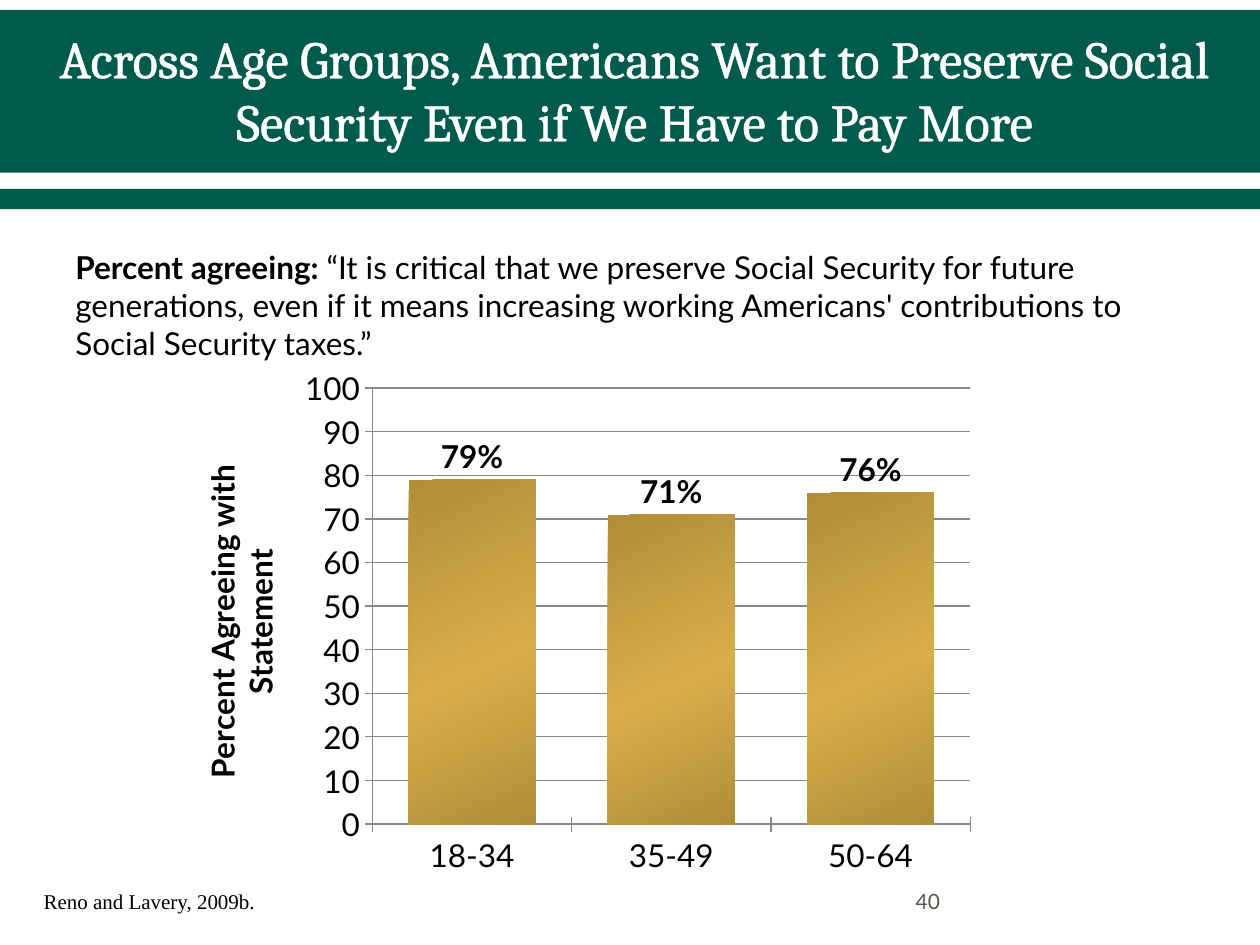
from copy import deepcopy

from lxml.etree import SubElement as Sub
from pptx import Presentation
from pptx.chart.data import CategoryChartData as Data
from pptx.dml.color import RGBColor as RGB
from pptx.enum.chart import XL_CHART_TYPE as Kind
from pptx.enum.chart import XL_LABEL_POSITION as Pos
from pptx.enum.chart import XL_TICK_MARK as Tick
from pptx.enum.shapes import MSO_SHAPE as Form
from pptx.enum.text import MSO_ANCHOR as Anchor
from pptx.enum.text import MSO_AUTO_SIZE as Auto
from pptx.enum.text import PP_ALIGN as Align
from pptx.oxml import parse_xml
from pptx.oxml.ns import nsdecls, qn
from pptx.util import Cm, Pt

GREEN = RGB(0x00, 0x5B, 0x4D)
WHITE = RGB(0xFF, 0xFF, 0xFF)
BLACK = RGB(0x00, 0x00, 0x00)
STONE = RGB(0x55, 0x55, 0x4A)
GRAY = RGB(0x88, 0x88, 0x88)
GOLD = RGB(0xD8, 0xAE, 0x4A)
DARK = RGB(0xB0, 0x8D, 0x38)


def style(font, name, size, color, bold=False):
    """Set the face, size, colour and weight of a font."""
    font.name, font.size, font.bold = name, Pt(size), bold
    font.color.rgb = color


def add_run(para, text, *look):
    """Append one styled run to a paragraph."""
    run = para.add_run()
    run.text = text
    style(run.font, *look)
    return run


def add_text(slide, box, runs, anchor=Anchor.TOP, auto=Auto.SHAPE_TO_FIT_TEXT):
    """Place a wrapping text box made of styled runs."""
    frame = slide.shapes.add_textbox(*map(Cm, box)).text_frame
    frame.word_wrap, frame.auto_size = True, auto
    frame.vertical_anchor = anchor
    for run in runs:
        add_run(frame.paragraphs[0], *run)


def add_head(slide, box, text):
    """Draw the green bands and set the title over them."""
    left, top, width, height = box
    for down, tall in ((0, 3.2), (3.61, 0.41), (0.08, 3.2)):
        band = slide.shapes.add_shape(
            Form.RECTANGLE, Cm(left), Cm(top + down), Cm(width), Cm(tall))
        band.shadow.inherit = False
        band.fill.solid()
        band.fill.fore_color.rgb = GREEN
        band.line.fill.background()
    title = slide.shapes.title
    slide.shapes._spTree.append(title._element)
    title.left, title.top = Cm(left + 0.63), Cm(top)
    title.width, title.height = Cm(width - 1.07), Cm(height)
    frame = title.text_frame
    frame.word_wrap, frame.auto_size = True, Auto.NONE
    frame.vertical_anchor = Anchor.MIDDLE
    para = frame.paragraphs[0]
    para.alignment = Align.CENTER
    run = add_run(para, text, "Cambria", 30, WHITE)
    run.font._element.insert(0, parse_xml(
        f'<a:ln {nsdecls("a")} w="{Pt(1.1)}"><a:solidFill>'
        f'<a:srgbClr val="{WHITE}"/></a:solidFill></a:ln>'))


def shade(fill):
    """Give a fill the slanted dark-gold-dark gradient."""
    fill.gradient()
    fill.gradient_angle = 295
    stops = fill._xPr.find(".//" + qn("a:gsLst"))
    stops.insert(1, deepcopy(stops[0]))
    for stop, color, at in zip(fill.gradient_stops, (DARK, GOLD, DARK), (0, 0.55, 1)):
        stop.color.rgb, stop.position = color, at


def set_plot(chart, **edges):
    """Fix the inner plot area as fractions of the chart."""
    area = chart._chartSpace.chart.plotArea
    for old in area.findall(qn("c:layout")):
        area.remove(old)
    outer = parse_xml(f'<c:layout {nsdecls("c")}/>')
    area.insert(0, outer)
    inner = Sub(outer, qn("c:manualLayout"))
    modes = dict(layoutTarget="inner", xMode="edge", yMode="edge")
    for tag, val in {**modes, **edges}.items():
        Sub(inner, qn("c:" + tag), val=str(val))


def add_bars(slide, box):
    """Place the column chart of agreement by age group."""
    data = Data()
    data.categories = ["18-34", "35-49", "50-64"]
    data.add_series("Series 1", (79, 71, 76))
    chart = slide.shapes.add_chart(
        Kind.COLUMN_CLUSTERED, *map(Cm, box), data).chart
    chart.has_legend = chart.has_title = False
    style(chart.font, "Lato", 18, BLACK)
    set_plot(chart, x=0.25, y=0.06, w=0.73, h=0.83)

    axis = chart.value_axis
    axis.minimum_scale, axis.maximum_scale, axis.major_unit = 0, 100, 10
    axis.major_gridlines.format.line.color.rgb = GRAY
    for each in (axis, chart.category_axis):
        each.major_tick_mark = Tick.CROSS
        each.minor_tick_mark = Tick.NONE
        each.format.line.color.rgb = GRAY
    para = axis.axis_title.text_frame.paragraphs[0]
    add_run(para, "Percent Agreeing with Statement", "Lato", 18, BLACK, True)

    plot = chart.plots[0]
    plot.gap_width, plot.vary_by_categories = 57, False
    shade(plot.series[0].format.fill)
    plot.has_data_labels = True
    labels = plot.data_labels
    labels.show_value, labels.position = True, Pos.OUTSIDE_END
    labels.number_format, labels.number_format_is_linked = 'General\\%', False
    style(labels.font, "Lato", 18, BLACK, True)


def main():
    """Build and save the slide."""
    deck = Presentation()
    deck.slide_width, deck.slide_height = Cm(25.4), Cm(19.05)
    slide = deck.slides.add_slide(deck.slide_layouts[5])
    add_head(slide, (0, 0.2, 25.4, 3.18),
             "Across Age Groups, Americans Want to Preserve Social Security "
             "Even if We Have to Pay More")
    add_bars(slide, (3.38, 7.19, 16.51, 10.59))
    add_text(slide, (1.27, 4.88, 22.23, 2.57), [
        ("Percent agreeing: ", "Lato", 18, BLACK, True),
        ("“It is critical that we preserve Social Security for future "
         "generations, even if it means increasing working Americans' "
         "contributions to Social Security taxes.”", "Lato", 18, BLACK)])
    add_text(slide, (18.21, 17.65, 5.92, 1.02),
             [("40", "Lato", 12, STONE)], Anchor.MIDDLE, Auto.NONE)
    add_text(slide, (0.63, 17.78, 5.28, 0.76),
             [("Reno and Lavery, 2009b.", "Times New Roman", 12, BLACK)])
    deck.save("out.pptx")


if __name__ == "__main__":
    main()
